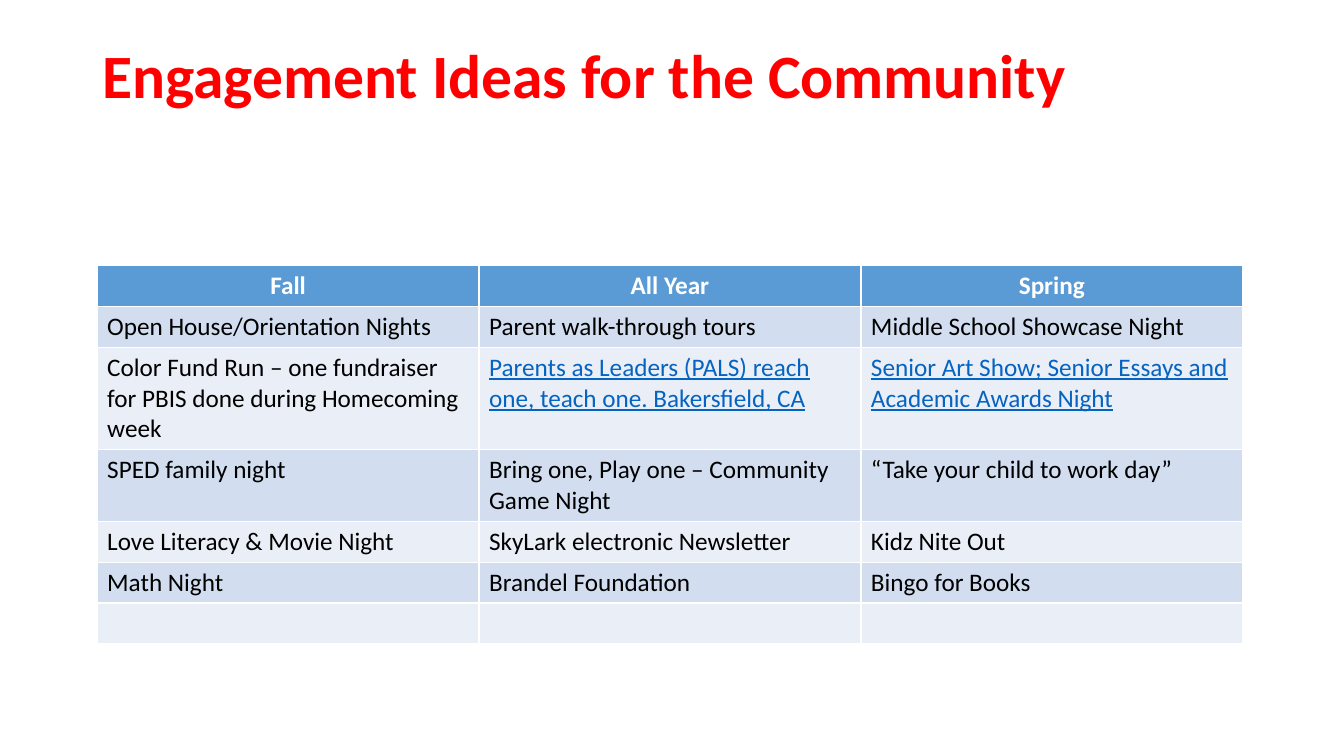
from pptx import Presentation
from pptx import util as u
from pptx.dml import color
from pptx.enum import text


def rgb(value):
    return color.RGBColor.from_string(value)


def style(para, size, ink, bold=False):
    para.font.name = "Calibri"
    para.font.size = u.Pt(size)
    para.font.bold = bold
    para.font.color.rgb = rgb(ink)


deck = Presentation()
deck.slide_width = u.Pt(960)
deck.slide_height = u.Pt(540)
page = deck.slides.add_slide(deck.slide_layouts[6])

ideas = [
    ["Fall", "All Year", "Spring"],
    ["Open House/Orientation Nights", "Parent walk-through tours", "Middle School Showcase Night"],
    ["Color Fund Run – one fundraiser for PBIS done during Homecoming week",
     "Parents as Leaders (PALS) reach one, teach one. Bakersfield, CA",
     "Senior Art Show; Senior Essays and Academic Awards Night"],
    ["SPED family night", "Bring one, Play one – Community Game Night", "“Take your child to work day”"],
    ["Love Literacy & Movie Night", "SkyLark electronic Newsletter", "Kidz Nite Out"],
    ["Math Night", "Brandel Foundation", "Bingo for Books"],
    ["", "", ""],
]
underlined = [(2, 1), (2, 2)]
row_height = 29.2
column_width = 272.8

table = page.shapes.add_table(
    len(ideas), 3, u.Pt(69.4), u.Pt(189.7),
    u.Pt(3 * column_width), u.Pt(len(ideas) * row_height)).table
for column in table.columns:
    column.width = u.Pt(column_width)
for row_index, row in enumerate(ideas):
    table.rows[row_index].height = u.Pt(row_height)
    for column_index, wording in enumerate(row):
        cell = table.cell(row_index, column_index)
        cell.text = wording
        cell.fill.solid()
        para = cell.text_frame.paragraphs[0]
        if row_index == 0:
            cell.fill.fore_color.rgb = rgb("5B9BD5")
            para.alignment = text.PP_ALIGN.CENTER
            style(para, 18, "FFFFFF", bold=True)
            continue
        cell.fill.fore_color.rgb = rgb("D2DEEF" if row_index % 2 else "EAEFF7")
        if (row_index, column_index) in underlined:
            style(para, 18, "0563C1")
            para.font.underline = True
        else:
            style(para, 18, "000000")

title = page.shapes.add_textbox(u.Pt(66), u.Pt(28.8), u.Pt(828), u.Pt(104.4)).text_frame
title.word_wrap = True
title.vertical_anchor = text.MSO_ANCHOR.TOP
title.text = "Engagement Ideas for the Community"
heading = title.paragraphs[0]
heading.line_spacing = 0.9
style(heading, 44, "FF0000", bold=True)

deck.save("out.pptx")
